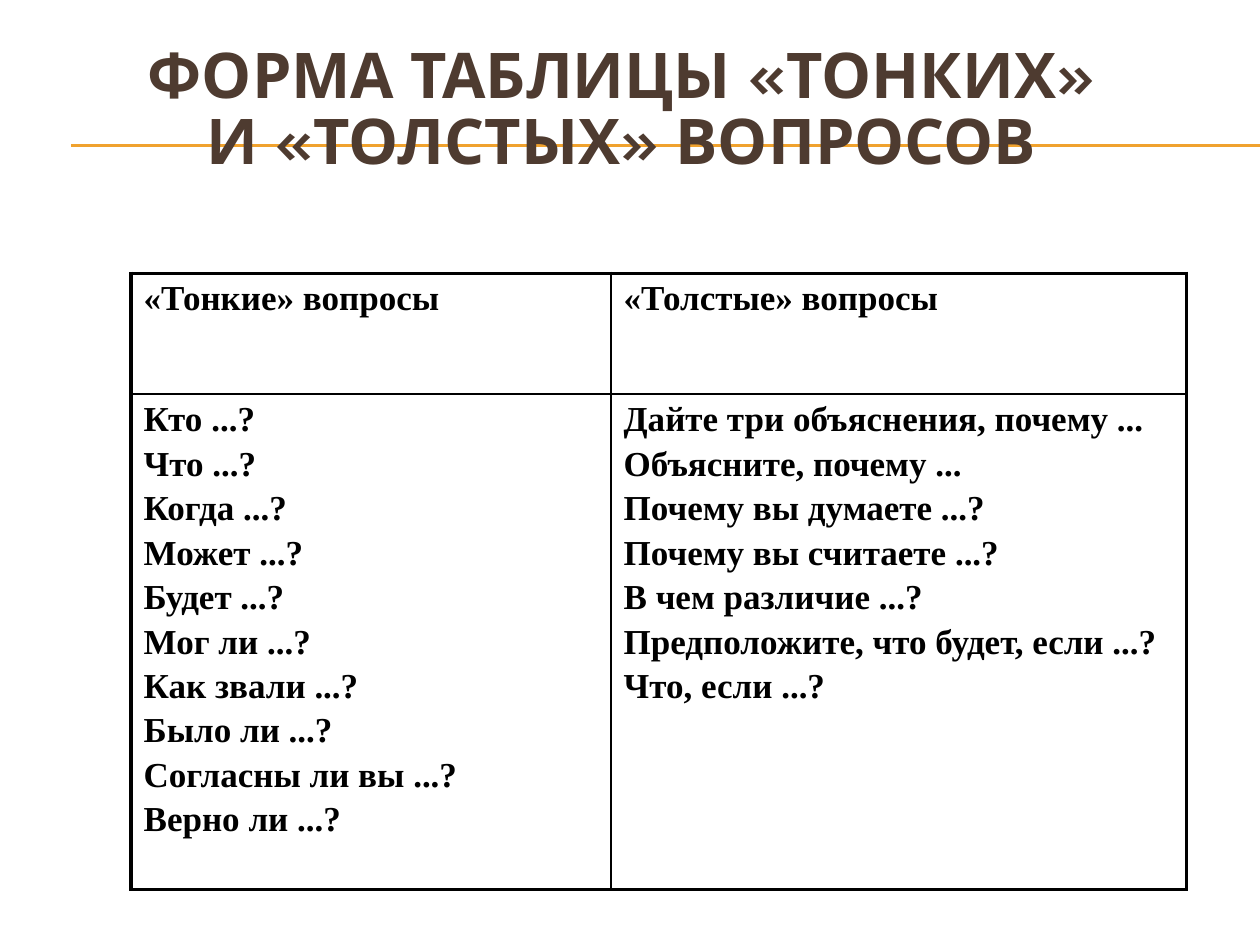
from lxml import etree
from pptx import Presentation
from pptx.dml.color import RGBColor
from pptx.enum.shapes import MSO_CONNECTOR
from pptx.enum.text import MSO_ANCHOR, PP_ALIGN
from pptx.oxml.ns import qn
from pptx.util import Pt

STRAIGHT = MSO_CONNECTOR.STRAIGHT
MIDDLE = MSO_ANCHOR.MIDDLE
CENTER = PP_ALIGN.CENTER

COLORS = {"title": "4E3B30", "rule": "F0A22E", "ink": "000000"}
OUTER, INNER = 2.25, 1

COLUMN_WIDTHS = [274.3, 329]
ROW_HEIGHTS = [69.1, 283]
QUESTIONS = [
    [["«Тонкие» вопросы"], ["«Толстые» вопросы"]],
    [
        ["Кто ...?", "Что ...?", "Когда ...?", "Может ...?", "Будет ...?",
         "Мог ли ...?", "Как звали ...?", "Было ли ...?",
         "Согласны ли вы ...?", "Верно ли ...?"],
        ["Дайте три объяснения, почему ...", "Объясните, почему ...",
         "Почему вы думаете ...?", "Почему вы считаете ...?",
         "В чем различие ...?", "Предположите, что будет, если ...?",
         "Что, если ...?"],
    ],
]


def add_run(paragraph, text, font_name, size, color):
    run = paragraph.add_run()
    run.text = text
    run.font.name = font_name
    run.font.size = Pt(size)
    run.font.bold = True
    run.font.color.rgb = RGBColor.from_string(COLORS[color])


def add_double_rule(slide, left, top, right, gap):
    for y in (top, top + gap):
        rule = slide.shapes.add_connector(STRAIGHT, Pt(left), Pt(y), Pt(right), Pt(y))
        rule.line.color.rgb = RGBColor.from_string(COLORS["rule"])
        rule.line.width = Pt(0.75)
        etree.SubElement(rule._element.spPr, qn("a:effectLst"))


def add_title(slide, left, top, width, height):
    box = slide.shapes.add_textbox(Pt(left), Pt(top), Pt(width), Pt(height))
    frame = box.text_frame
    frame.word_wrap = True
    frame.vertical_anchor = MIDDLE
    paragraph = frame.paragraphs[0]
    paragraph.alignment = CENTER
    paragraph.line_spacing = 0.88
    add_run(paragraph, "ФОРМА ТАБЛИЦЫ «ТОНКИХ» И «ТОЛСТЫХ» ВОПРОСОВ", "Karla", 36, "title")


def set_borders(cell, widths):
    properties = cell._tc.get_or_add_tcPr()
    for position, (side, width) in enumerate(widths.items()):
        line = etree.Element(qn(f"a:ln{side}"), w=str(int(Pt(width))))
        fill = etree.SubElement(line, qn("a:solidFill"))
        etree.SubElement(fill, qn("a:srgbClr"), val=COLORS["ink"])
        properties.insert(position, line)


def fill_cell(cell, lines):
    frame = cell.text_frame
    for index, text in enumerate(lines):
        paragraph = frame.add_paragraph() if index else frame.paragraphs[0]
        paragraph.space_before = Pt(3.2 if index else 0)
        add_run(paragraph, text, "Times New Roman", 20, "ink")


def add_question_table(slide, left, top):
    rows, columns = len(ROW_HEIGHTS), len(COLUMN_WIDTHS)
    table = slide.shapes.add_table(
        rows, columns, Pt(left), Pt(top),
        Pt(sum(COLUMN_WIDTHS)), Pt(sum(ROW_HEIGHTS))).table
    table.first_row = False
    table.horz_banding = False
    for column, width in zip(table.columns, COLUMN_WIDTHS):
        column.width = Pt(width)
    for row, height in zip(table.rows, ROW_HEIGHTS):
        row.height = Pt(height)
    for r in range(rows):
        for c in range(columns):
            cell = table.cell(r, c)
            cell.fill.background()
            fill_cell(cell, QUESTIONS[r][c])
            set_borders(cell, {
                "L": OUTER if c == 0 else INNER,
                "R": OUTER if c == columns - 1 else INNER,
                "T": OUTER if r == 0 else INNER,
                "B": OUTER if r == rows - 1 else INNER,
            })


def main():
    presentation = Presentation()
    presentation.slide_width = Pt(720)
    presentation.slide_height = Pt(540)
    slide = presentation.slides.add_slide(presentation.slide_layouts[6])
    add_double_rule(slide, 40.5, 82.8, 720, 0.7)
    add_title(slide, 73.4, 7.9, 563.8, 111.6)
    add_question_table(slide, 74.9, 156.2)
    presentation.save("out.pptx")


if __name__ == "__main__":
    main()
